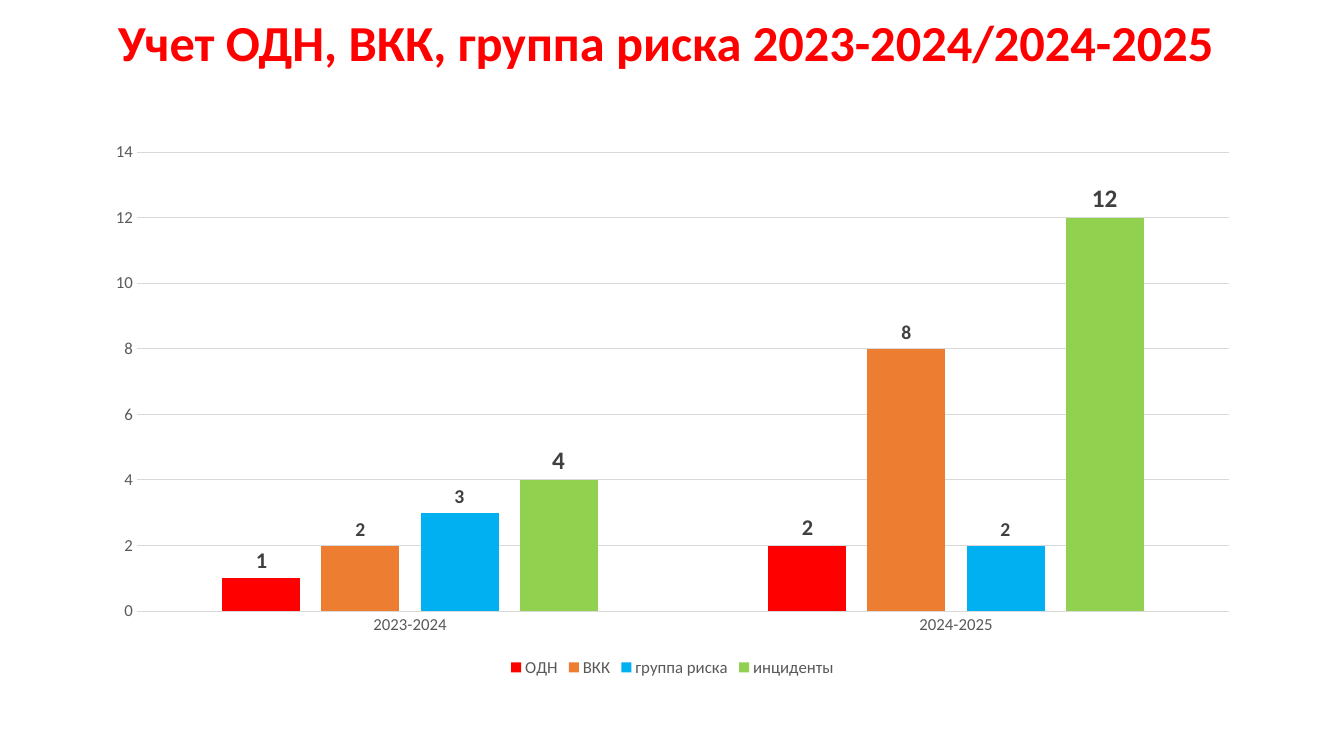
from pptx import Presentation
from pptx.chart.data import CategoryChartData
from pptx.dml.color import RGBColor
from pptx.enum.chart import XL_CHART_TYPE, XL_LABEL_POSITION, XL_LEGEND_POSITION, XL_TICK_MARK
from pptx.enum.text import MSO_ANCHOR, PP_ALIGN
from pptx.util import Inches, Pt

HUES = {
    "red": "FF0000",
    "orange": "ED7D31",
    "blue": "00B0F0",
    "green": "92D050",
    "grid": "D9D9D9",
    "axis": "595959",
    "label": "404040",
}
YEARS = ["2023-2024", "2024-2025"]
GROUPS = [
    ("ОДН", (1, 2), "red", 16),
    ("ВКК", (2, 8), "orange", 14),
    ("группа риска", (3, 2), "blue", 14),
    ("инциденты", (4, 12), "green", 18),
]


def hue(name):
    """Return the named colour."""
    return RGBColor.from_string(HUES[name])


def apply(item, values):
    """Set each attribute of the item from a dict."""
    for key, value in values.items():
        setattr(item, key, value)


def style(font, size, tone, bold=False):
    """Format a font."""
    apply(font, {"name": "Calibri", "size": Pt(size), "bold": bold})
    font.color.rgb = hue(tone)


def rule(line):
    """Format a thin grey line."""
    line.width = Pt(0.75)
    line.color.rgb = hue("grid")


def add_title(slide, text):
    """Add the centred slide title."""
    box = slide.shapes.add_textbox(Inches(0.86), Inches(0.13), Inches(11.5), Inches(0.64))
    frame = box.text_frame
    apply(frame, {"word_wrap": True, "vertical_anchor": MSO_ANCHOR.MIDDLE})
    para = frame.paragraphs[0]
    apply(para, {"text": text, "alignment": PP_ALIGN.CENTER, "line_spacing": 0.9})
    style(para.runs[0].font, 36, "red", True)


def style_axes(chart):
    """Format both axes and the grid."""
    for axis in (chart.category_axis, chart.value_axis):
        apply(axis, {"major_tick_mark": XL_TICK_MARK.NONE, "minor_tick_mark": XL_TICK_MARK.NONE})
        style(axis.tick_labels.font, 12, "axis")
    rule(chart.category_axis.format.line)
    axis = chart.value_axis
    apply(axis, {"minimum_scale": 0, "maximum_scale": 14, "major_unit": 2})
    axis.format.line.fill.background()
    rule(axis.major_gridlines.format.line)


def style_bars(plot):
    """Colour the bars and label their values."""
    apply(plot, {"gap_width": 219, "overlap": -27, "vary_by_categories": False})
    for bars, (_, _, tone, size) in zip(plot.series, GROUPS):
        bars.format.fill.solid()
        bars.format.fill.fore_color.rgb = hue(tone)
        bars.invert_if_negative = False
        labels = bars.data_labels
        apply(labels, {"show_value": True, "position": XL_LABEL_POSITION.OUTSIDE_END})
        style(labels.font, size, "label", True)


def add_bars(slide):
    """Add the column chart."""
    data = CategoryChartData()
    data.categories = YEARS
    for name, values, _, _ in GROUPS:
        data.add_series(name, values)
    chart = slide.shapes.add_chart(
        XL_CHART_TYPE.COLUMN_CLUSTERED,
        Inches(0.92), Inches(1.3), Inches(11.5), Inches(5.46), data,
    ).chart
    apply(chart, {"has_title": False, "has_legend": True})
    style(chart.font, 12, "axis")
    apply(chart.legend, {"position": XL_LEGEND_POSITION.BOTTOM, "include_in_layout": False})
    style(chart.legend.font, 12, "axis")
    style_axes(chart)
    style_bars(chart.plots[0])


def main():
    """Build and save the slide."""
    deck = Presentation()
    apply(deck, {"slide_width": Inches(13.33), "slide_height": Inches(7.5)})
    slide = deck.slides.add_slide(deck.slide_layouts[6])
    add_title(slide, "Учет ОДН, ВКК, группа риска 2023-2024/2024-2025")
    add_bars(slide)
    deck.save("out.pptx")


if __name__ == "__main__":
    main()
